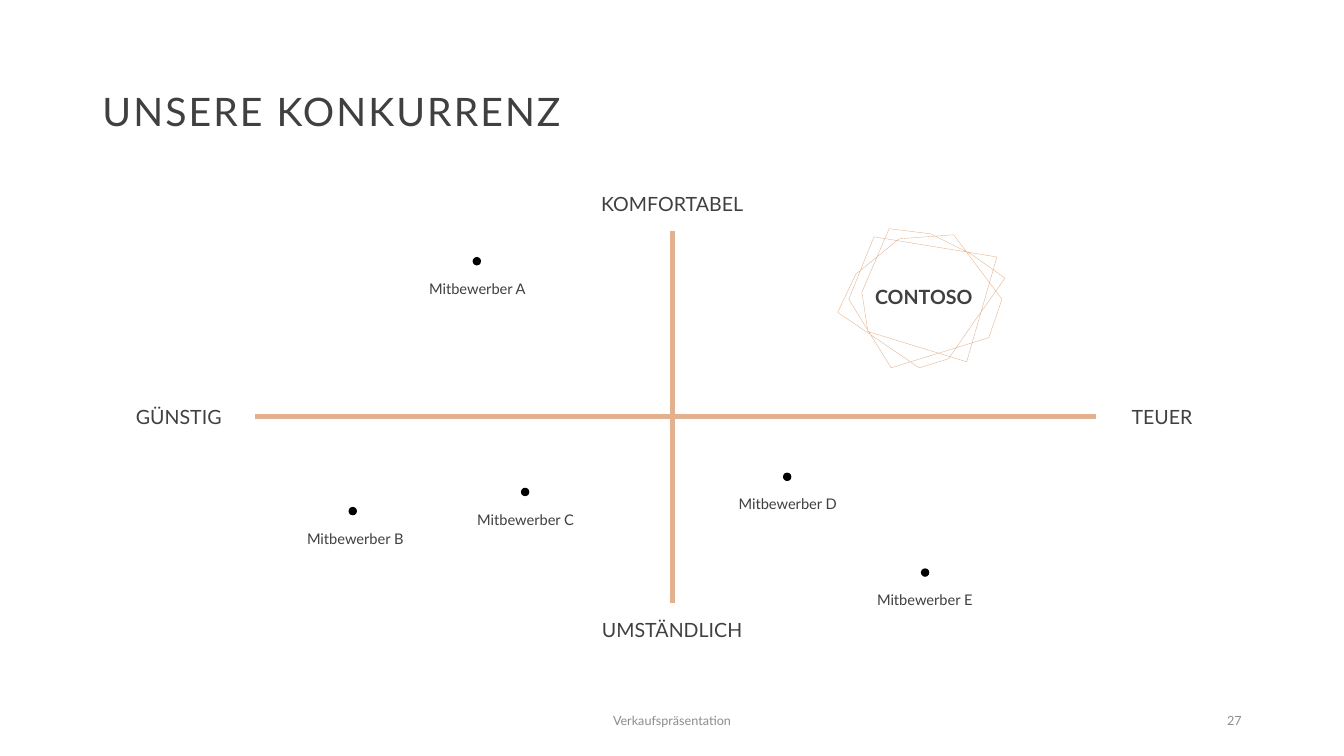
from dataclasses import dataclass

import pptx
import pptx.dml.color
import pptx.enum.shapes
import pptx.enum.text
import pptx.oxml
import pptx.oxml.ns
import pptx.util

Pt = pptx.util.Pt
ALIGN = pptx.enum.text.PP_ALIGN
MIDDLE = pptx.enum.text.MSO_ANCHOR.MIDDLE


def rgb(code):
    return pptx.dml.color.RGBColor.from_string(code)


@dataclass(frozen=True)
class Theme:
    font: str = "Lato"
    text: str = "404040"
    muted: str = "8C8C8C"
    accent: str = "E2B18D"
    dot: str = "000000"
    title_size: float = 28
    axis_size: float = 14
    name_size: float = 10.5
    footer_size: float = 9


@dataclass(frozen=True)
class Box:
    left: float
    top: float
    width: float
    height: float

    @property
    def right(self):
        return self.left + self.width

    @property
    def bottom(self):
        return self.top + self.height

    @property
    def middle(self):
        return self.top + self.height / 2

    def lengths(self):
        return [Pt(n) for n in (self.left, self.top, self.width, self.height)]


THEME = Theme()
LABEL_HEIGHT = 38.9
AXIS_LABEL_WIDTH = 134.6
SIDE_LABEL_WIDTH = 109
NAME_WIDTH = 92.9
DOT_SIZE = 6
CROSSING = 298  # vertical axis, from the left edge of the map

# Name, dot x, dot y, label centre x, measured from the corner of the map
COMPETITORS = [
    ("Mitbewerber A", 158.4, 21.7, 158.8),
    ("Mitbewerber B", 69.8, 200.2, 71.6),
    ("Mitbewerber C", 192.9, 186.5, 193.3),
    ("Mitbewerber D", 380.1, 175.7, 380.5),
    ("Mitbewerber E", 478.6, 244.1, 478.4),
]

# Corners of the emblem line, in hundredths of an inch
EMBLEM_CORNERS = [
    (61, 10), (23, 41), (18, 45), (0, 83), (81, 138), (110, 129), (137, 90),
    (166, 49), (132, 25), (92, 5), (51, 0), (24, 63), (30, 102), (128, 132),
    (158, 28), (36, 8), (11, 70), (53, 138), (150, 108), (163, 70), (115, 6),
]


def style_text(frame, text, size, color=THEME.text, align=ALIGN.CENTER, bold=False):
    frame.text = text
    frame.word_wrap = True
    frame.vertical_anchor = MIDDLE
    para = frame.paragraphs[0]
    para.alignment = align
    span = para.runs[0]
    span.font.name = THEME.font
    span.font.size = Pt(size)
    span.font.bold = bold
    span.font.color.rgb = rgb(color)
    return para


def add_label(page, box, text, size, **style):
    style_text(page.shapes.add_textbox(*box.lengths()).text_frame, text, size, **style)


def add_title(page, box, text):
    title = page.shapes.title
    title.left, title.top, title.width, title.height = box.lengths()
    para = style_text(title.text_frame, text, THEME.title_size, align=ALIGN.LEFT)
    para.line_spacing = 0.9
    para.runs[0]._r.get_or_add_rPr().set("spc", "150")


def add_axis(page, start, end):
    axis = page.shapes.add_connector(
        pptx.enum.shapes.MSO_CONNECTOR.STRAIGHT, *[Pt(n) for n in (*start, *end)])
    axis.line.color.rgb = rgb(THEME.accent)
    axis.line.width = Pt(3.5)
    axis._element.spPr.append(pptx.oxml.parse_xml(
        f"<a:effectLst {pptx.oxml.ns.nsdecls('a')}/>"))


def add_axes(page, box):
    """Draw the crossing axes across the box, with a label beyond each end."""
    cross = box.left + CROSSING
    add_axis(page, (box.left, box.middle), (box.right, box.middle))
    add_axis(page, (cross, box.bottom), (cross, box.top))

    for text, top in (("KOMFORTABEL", box.top - LABEL_HEIGHT),
                      ("UMSTÄNDLICH", box.bottom)):
        area = Box(cross - AXIS_LABEL_WIDTH / 2, top, AXIS_LABEL_WIDTH, LABEL_HEIGHT)
        add_label(page, area, text, THEME.axis_size)
    for text, left in (("GÜNSTIG", box.left - SIDE_LABEL_WIDTH),
                       ("TEUER", box.right - 7)):
        area = Box(left, box.middle - LABEL_HEIGHT / 2, SIDE_LABEL_WIDTH, LABEL_HEIGHT)
        add_label(page, area, text, THEME.axis_size)


def add_competitors(page, box):
    for name, dot_x, dot_y, label_x in COMPETITORS:
        top = box.top + dot_y
        area = Box(box.left + dot_x - DOT_SIZE / 2, top - DOT_SIZE / 2, DOT_SIZE, DOT_SIZE)
        dot = page.shapes.add_shape(
            pptx.enum.shapes.MSO_SHAPE.OVAL, *area.lengths())
        dot.shadow.inherit = False
        dot.fill.solid()
        dot.fill.fore_color.rgb = rgb(THEME.dot)
        dot.line.fill.background()
        area = Box(box.left + label_x - NAME_WIDTH / 2, top, NAME_WIDTH, LABEL_HEIGHT)
        add_label(page, area, name, THEME.name_size)


def add_own_company(page, box):
    """Place the company name in the box, ringed by the emblem line."""
    builder = page.shapes.build_freeform(*EMBLEM_CORNERS[0], scale=Pt(0.72))
    builder.add_line_segments(EMBLEM_CORNERS[1:], close=True)
    emblem = builder.convert_to_shape(Pt(box.left + 5.8), Pt(box.top - 7.2))
    emblem.shadow.inherit = False
    emblem.fill.background()
    emblem.line.color.rgb = rgb(THEME.accent)
    emblem.line.width = Pt(0.25)
    add_label(page, box, "CONTOSO", THEME.axis_size, bold=True)


def add_footer(page, box):
    centre = Box(box.left + 252, box.top, 324, box.height)
    number = Box(box.right - 216, box.top, 216, box.height)
    add_label(page, centre, "Verkaufspräsentation", THEME.footer_size, color=THEME.muted)
    add_label(page, number, "27", THEME.footer_size, color=THEME.muted, align=ALIGN.RIGHT)


def add_competition_page(deck):
    page = deck.slides.add_slide(deck.slide_layouts.get_by_name("Title Only"))
    market = Box(182.2, 164.9, 600.4, 265.6)
    add_title(page, Box(66, 28.8, 828, 104.4), "UNSERE KONKURRENZ")
    add_axes(page, market)
    add_competitors(page, market)
    add_own_company(page, Box(market.left + 410.4, market.top + 5.7, 134.6, 82.8))
    add_footer(page, Box(66, 500.4, 828, 28.8))


def main():
    deck = pptx.Presentation()
    deck.slide_width, deck.slide_height = Pt(960), Pt(540)
    add_competition_page(deck)
    deck.save("out.pptx")


if __name__ == "__main__":
    main()
